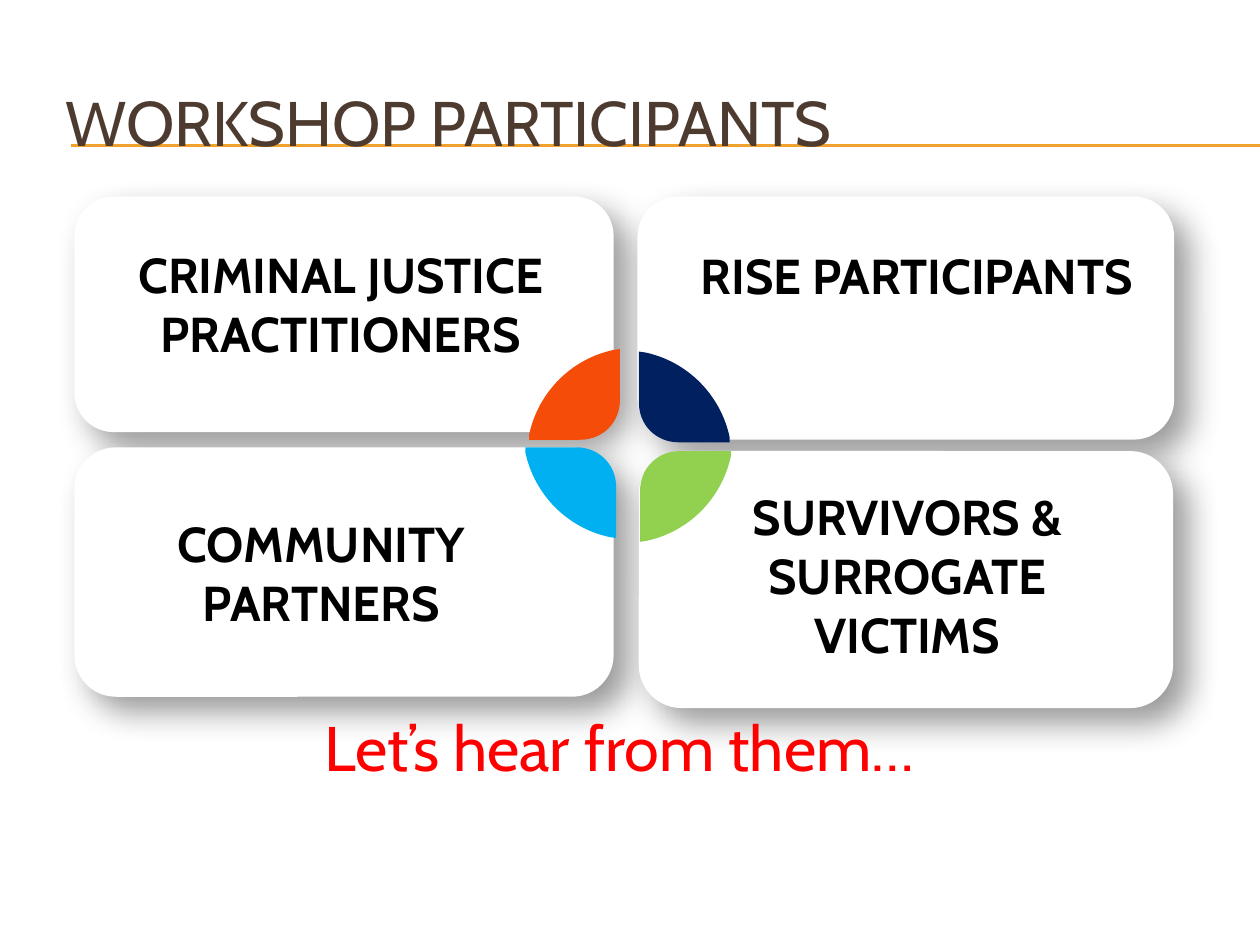
from lxml import etree
from pptx import Presentation
from pptx.dml.color import RGBColor
from pptx.enum import shapes, text
from pptx.oxml import ns
from pptx.util import Inches, Pt

COLORS = {"rule": "F0A22E", "title": "4E3B30", "card": "FFFFFF", "label": "000000",
          "closing": "FF0000", "orange": "F54C09", "navy": "002060",
          "sky": "00B0F0", "green": "92D050"}
TITLE = {"size": Pt(36), "name": "Cabin"}
LABEL = {"size": Pt(28), "name": "Cabin", "bold": True}
PETAL_SIZE = 0.72
PETAL_OUTLINE = [(1, 0), (1, 0.56), (1, 0.81), (0.81, 1), (0.56, 1), (0, 1),
                 (0, 0.94), (0.1, 0.48), (0.46, 0.11), (0.93, 0.01)]
PETAL_CURVES = [(1, 4), (6, 9)]
MIDDLE, TOP = text.MSO_ANCHOR.MIDDLE, text.MSO_ANCHOR.TOP
CENTER, LEFT = text.PP_ALIGN.CENTER, text.PP_ALIGN.LEFT

CARDS = [(0.59, 1.56, 4.28, 1.87), (0.59, 3.55, 4.28, 1.98),
         (5.06, 1.56, 4.26, 1.93), (5.07, 3.58, 4.24, 2.04)]
PETALS = [(4.2, 2.77, False, False, "orange"), (5.07, 2.79, True, False, "navy"),
          (4.17, 3.55, False, True, "sky"), (5.08, 3.58, True, True, "green")]
LABELS = [("CRIMINAL JUSTICE PRACTITIONERS", (1.02, 1.89, 3.37, 1.04), 0, 0.05),
          ("COMMUNITY PARTNERS", (0.7, 4.02, 3.7, 1.51), 0, 0.52),
          ("RISE PARTICIPANTS", (5.5, 1.9, 3.65, 1.04), 0.1, 0.52),
          ("SURVIVORS & SURROGATE VICTIMS", (5.42, 3.81, 3.66, 1.51), 0.1, 0.05)]


def rgb(name):
    """Return the named colour."""
    return RGBColor.from_string(COLORS[name])


def add_effects(shape):
    """Append an empty effect list to a shape and return it."""
    return etree.SubElement(shape._element.spPr, ns.qn("a:effectLst"))


def add_text(page, wording, area, font, color, align=CENTER, anchor=TOP,
             left=0.1, right=0.1, bottom=0.05):
    """Place one wrapped paragraph in the given area."""
    box = page.shapes.add_textbox(*map(Inches, area))
    frame_format = {"word_wrap": True, "vertical_anchor": anchor,
                    "margin_left": Inches(left), "margin_right": Inches(right),
                    "margin_bottom": Inches(bottom)}
    for key, value in frame_format.items():
        setattr(box.text_frame, key, value)
    para = box.text_frame.paragraphs[0]
    para.alignment = align
    span = para.add_run()
    span.text = wording
    for key, value in font.items():
        setattr(span.font, key, value)
    span.font.color.rgb = rgb(color)


def add_header(page, area):
    """Draw the double rule and the title over it."""
    for height in (1.15, 1.16):
        rule = page.shapes.add_connector(shapes.MSO_CONNECTOR.STRAIGHT, Inches(0.56),
                                         Inches(height), Inches(10), Inches(height))
        rule.line.color.rgb = rgb("rule")
        rule.line.width = Pt(0.75)
        add_effects(rule)
    add_text(page, "WORKSHOP PARTICIPANTS", area, TITLE, "title", LEFT, MIDDLE)


def add_card(page, area):
    """Draw a white rounded card with a soft diagonal shadow."""
    card = page.shapes.add_shape(shapes.MSO_SHAPE.ROUNDED_RECTANGLE, *map(Inches, area))
    card.fill.solid()
    card.fill.fore_color.rgb = rgb("card")
    card.line.fill.background()
    shadow = etree.SubElement(add_effects(card), ns.qn("a:outerShdw"), blurRad=str(Pt(19)),
                              dist=str(Pt(12)), dir=str(45 * 60000), algn="tl",
                              rotWithShape="0")
    tint = etree.SubElement(shadow, ns.qn("a:srgbClr"), val=COLORS["label"])
    etree.SubElement(tint, ns.qn("a:alpha"), val="40000")


def bend_segments(shape):
    """Join each run of three control segments into one cubic curve."""
    segments = list(shape._element.iter(ns.qn("a:lnTo")))
    for start, end in PETAL_CURVES:
        curve = etree.Element(ns.qn("a:cubicBezTo"))
        segments[start].addprevious(curve)
        for segment in segments[start:end]:
            curve.append(segment[0])
            segment.getparent().remove(segment)


def add_petal(page, left, top, flip_x, flip_y, color):
    """Draw one petal, mirrored so its rounded corner faces the centre."""
    points = [(Inches(left + PETAL_SIZE * (1 - x if flip_x else x)),
               Inches(top + PETAL_SIZE * (1 - y if flip_y else y)))
              for x, y in PETAL_OUTLINE]
    builder = page.shapes.build_freeform(*points[0])
    builder.add_line_segments(points[1:], close=True)
    petal = builder.convert_to_shape()
    bend_segments(petal)
    petal.shadow.inherit = False
    petal.fill.solid()
    petal.fill.fore_color.rgb = rgb(color)
    petal.line.fill.background()


def add_participants(page):
    """Place the four cards, the central petals and the group labels."""
    for area in CARDS:
        add_card(page, area)
    for petal in PETALS:
        add_petal(page, *petal)
    for wording, area, right, bottom in LABELS:
        add_text(page, wording, area, LABEL, "label", CENTER, MIDDLE, 0, right, bottom)


def main():
    """Build and save the slide."""
    deck = Presentation()
    deck.slide_width, deck.slide_height = Inches(10), Inches(7.5)
    page = deck.slides.add_slide(deck.slide_layouts[6])
    add_header(page, (0.42, 0.5, 9.5, 0.92))
    add_participants(page)
    add_text(page, "Let’s hear from them…", (2.42, 5.57, 4.99, 1.92), TITLE, "closing")
    deck.save("out.pptx")


if __name__ == "__main__":
    main()
